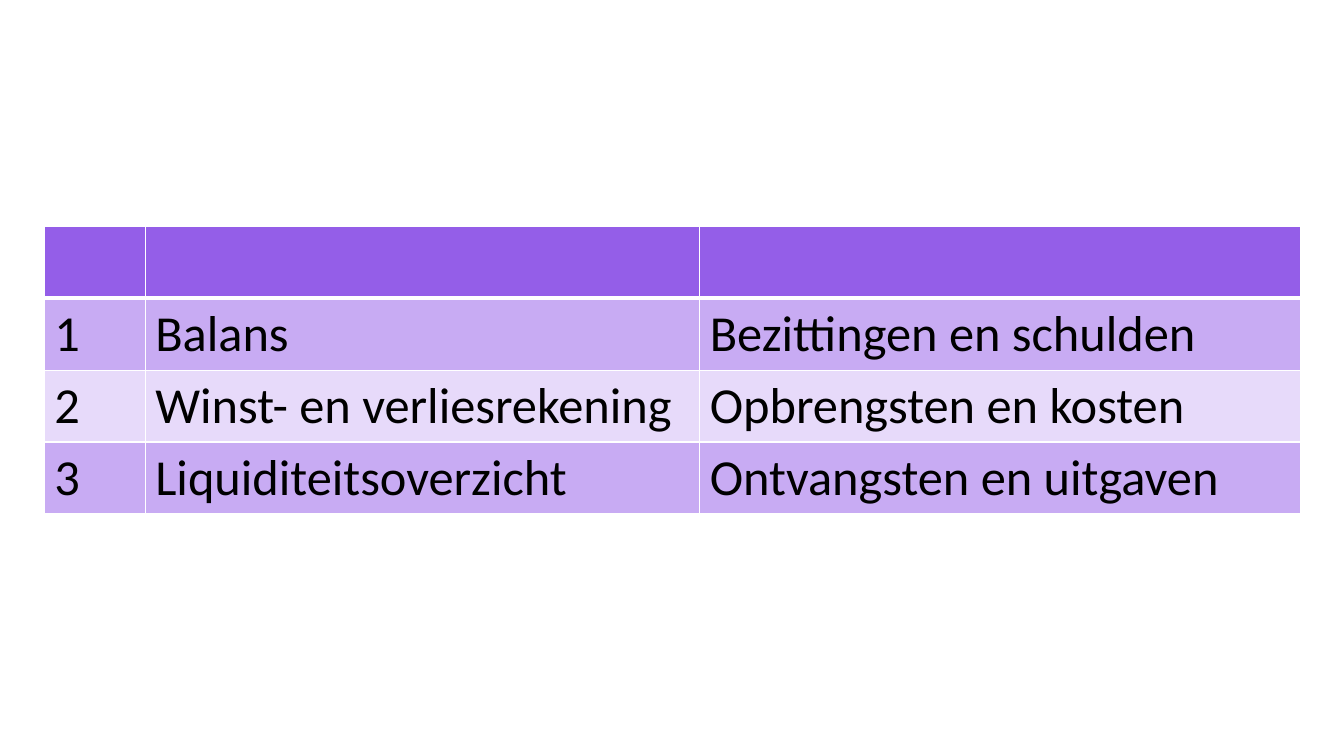
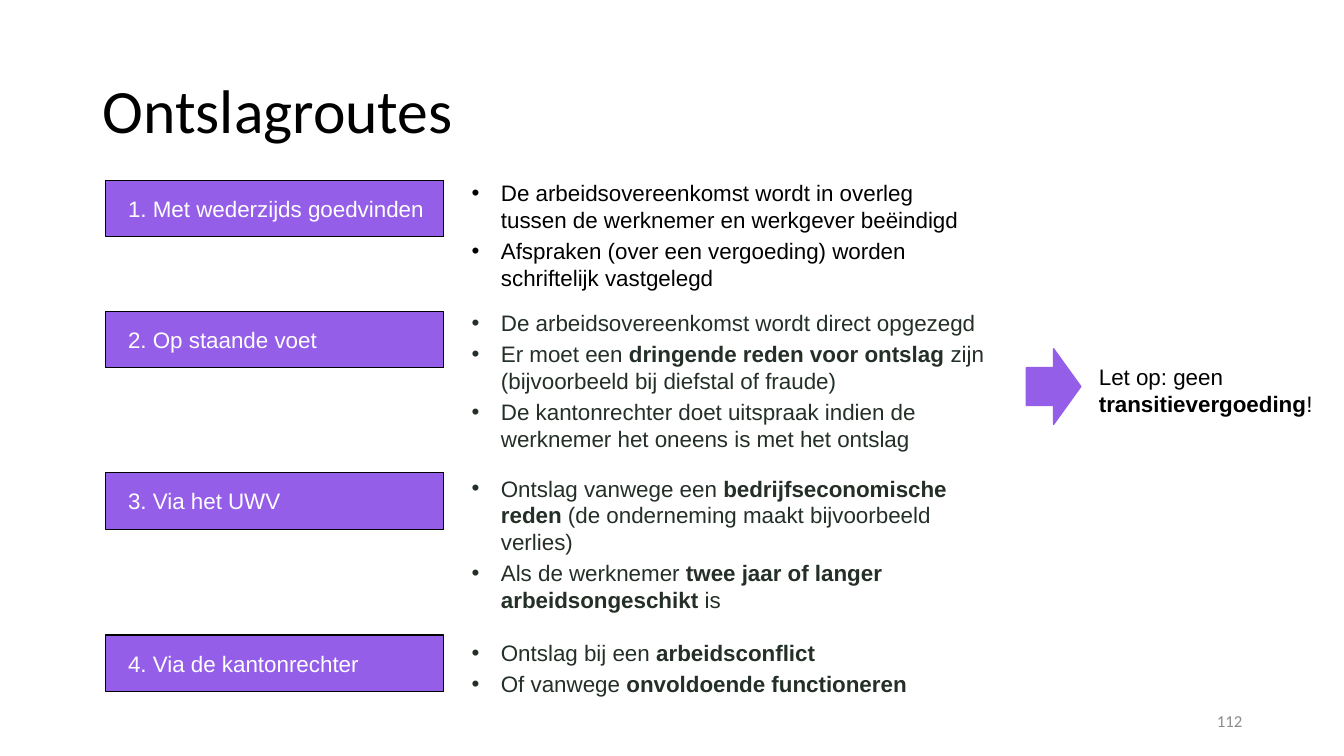
from dataclasses import dataclass

from lxml import etree
from pptx import Presentation
from pptx.dml.color import RGBColor
from pptx.enum.shapes import MSO_SHAPE
from pptx.enum.text import MSO_ANCHOR, PP_ALIGN
from pptx.oxml.ns import qn
from pptx.util import Inches, Pt

RECTANGLE = MSO_SHAPE.RECTANGLE
RIGHT_ARROW = MSO_SHAPE.RIGHT_ARROW
TOP, MIDDLE = MSO_ANCHOR.TOP, MSO_ANCHOR.MIDDLE
LEFT, RIGHT = PP_ALIGN.LEFT, PP_ALIGN.RIGHT

COLORS = {
    "purple": "945EE8",
    "band_dark": "C8ABF3",
    "band_light": "E7DAFA",
    "black": "000000",
    "white": "FFFFFF",
    "body": "242F27",
    "page": "8C8C8C",
}
HEADING_FONT, BODY_FONT = "Calibri", "Arial"
BODY_SIZE = 16
PARAGRAPH_GAP = Pt(3)
BULLET_INDENT = Inches(0.29)


@dataclass(frozen=True)
class Run:
    text: str
    bold: bool = False


@dataclass(frozen=True)
class Style:
    font: str = BODY_FONT
    size: int = BODY_SIZE
    color: str = "black"
    align: PP_ALIGN = LEFT
    line_spacing: float = 1.0
    bullet: bool = False


@dataclass(frozen=True)
class Route:
    label: str
    label_top: float
    points: list[list[Run]]
    points_top: float
    points_width: float
    points_height: float
    color: str = "body"


TITLE = Style(HEADING_FONT, 44, line_spacing=0.9)
PAGE_NUMBER = Style(HEADING_FONT, 12, "page", RIGHT)
TABLE_TEXT = Style(HEADING_FONT, 36)
LABEL = Style(color="white")

COLUMN_WIDTHS = [1, 5.5, 5.96]
ROW_HEIGHT = 0.71
STATEMENTS = [
    ("", "", ""),
    ("1", "Balans", "Bezittingen en schulden"),
    ("2", "Winst- en verliesrekening", "Opbrengsten en kosten"),
    ("3", "Liquiditeitsoverzicht", "Ontvangsten en uitgaven"),
]

ROUTES = [
    Route("1. Met wederzijds goedvinden", 1.79, [
        [Run("De arbeidsovereenkomst wordt in overleg tussen de werknemer "
             "en werkgever beëindigd")],
        [Run("Afspraken (over een vergoeding) worden schriftelijk vastgelegd")],
    ], 1.73, 5.17, 1.06, "black"),
    Route("2. Op staande voet", 3.09, [
        [Run("De arbeidsovereenkomst wordt direct opgezegd")],
        [Run("Er moet een "), Run("dringende reden voor ontslag ", True),
         Run("zijn (bijvoorbeeld bij diefstal of fraude)")],
        [Run("De kantonrechter doet uitspraak indien de werknemer het oneens "
             "is met het ontslag")],
    ], 3.02, 5.35, 1.63),
    Route("3. Via het UWV", 4.69, [
        [Run("Ontslag vanwege een "), Run("bedrijfseconomische reden ", True),
         Run("(de onderneming maakt bijvoorbeeld verlies)")],
        [Run("Als de werknemer "),
         Run("twee jaar of langer arbeidsongeschikt", True), Run(" is")],
    ], 4.66, 5.17, 1.25),
    Route("4. Via de kantonrechter", 6.3, [
        [Run("Ontslag bij een "), Run("arbeidsconflict", True)],
        [Run("Of vanwege "), Run("onvoldoende functioneren", True)],
    ], 6.29, 5.17, 0.8),
]
NOTE = [[Run("Let op: geen "), Run("transitievergoeding", True), Run("!")]]


def rgb(name: str) -> RGBColor:
    return RGBColor.from_string(COLORS[name])


def add_bullet(paragraph) -> None:
    properties = paragraph._p.get_or_add_pPr()
    properties.set("marL", str(BULLET_INDENT))
    properties.set("indent", str(-BULLET_INDENT))
    etree.SubElement(properties, qn("a:buFont"), typeface=BODY_FONT)
    etree.SubElement(properties, qn("a:buChar"), char="•")


def write(frame, paragraphs: list[list[Run]], style: Style) -> None:
    for index, runs in enumerate(paragraphs):
        paragraph = frame.add_paragraph() if index else frame.paragraphs[0]
        if style.bullet:
            add_bullet(paragraph)
        paragraph.alignment = style.align
        paragraph.line_spacing = style.line_spacing
        if index:
            paragraph.space_before = PARAGRAPH_GAP
        for item in runs:
            run = paragraph.add_run()
            run.text = item.text
            run.font.name = style.font
            run.font.size = Pt(style.size)
            run.font.bold = item.bold
            run.font.color.rgb = rgb(style.color)


def add_text(slide, left: float, top: float, width: float, height: float,
             paragraphs: list[list[Run]], style: Style,
             anchor: MSO_ANCHOR = TOP) -> None:
    box = slide.shapes.add_textbox(Inches(left), Inches(top),
                                   Inches(width), Inches(height))
    box.text_frame.word_wrap = True
    box.text_frame.vertical_anchor = anchor
    write(box.text_frame, paragraphs, style)


def add_purple_shape(slide, preset: MSO_SHAPE, left: float, top: float,
                     width: float, height: float, line: str,
                     line_width: float):
    shape = slide.shapes.add_shape(preset, Inches(left), Inches(top),
                                   Inches(width), Inches(height))
    shape.shadow.inherit = False
    shape.fill.solid()
    shape.fill.fore_color.rgb = rgb("purple")
    shape.line.color.rgb = rgb(line)
    shape.line.width = Pt(line_width)
    return shape


def set_borders(cell, top: float, bottom: float) -> None:
    properties = cell._tc.get_or_add_tcPr()
    widths = {"lnL": 1, "lnR": 1, "lnT": top, "lnB": bottom}
    for index, (side, width) in enumerate(widths.items()):
        border = etree.Element(qn(f"a:{side}"), w=str(Pt(width)))
        fill = etree.SubElement(border, qn("a:solidFill"))
        etree.SubElement(fill, qn("a:srgbClr"), val=COLORS["white"])
        properties.insert(index, border)


def build_statements(slide) -> None:
    table = slide.shapes.add_table(
        len(STATEMENTS), len(COLUMN_WIDTHS), Inches(0.44), Inches(2.25),
        Inches(sum(COLUMN_WIDTHS)), Inches(ROW_HEIGHT * len(STATEMENTS))).table
    table.horz_banding = False
    for column, width in zip(table.columns, COLUMN_WIDTHS):
        column.width = Inches(width)
    for row_index, texts in enumerate(STATEMENTS):
        table.rows[row_index].height = Inches(ROW_HEIGHT)
        band = "band_dark" if row_index % 2 else "band_light"
        for column_index, text in enumerate(texts):
            cell = table.cell(row_index, column_index)
            cell.fill.solid()
            cell.fill.fore_color.rgb = rgb(band if row_index else "purple")
            # Thick rule between the header and the first row
            set_borders(cell, top=3 if row_index == 1 else 1,
                        bottom=1 if row_index else 3)
            if text:
                write(cell.text_frame, [[Run(text)]], TABLE_TEXT)


def add_route(slide, route: Route) -> None:
    label = add_purple_shape(slide, RECTANGLE, 1.05, route.label_top,
                             3.35, 0.56, "black", 0.75)
    frame = label.text_frame
    frame.word_wrap = True
    frame.margin_left, frame.margin_right = Inches(0.22), Inches(0.05)
    frame.vertical_anchor = MIDDLE
    write(frame, [[Run(route.label)]], LABEL)
    add_text(slide, 4.58, route.points_top, route.points_width,
             route.points_height, route.points,
             Style(color=route.color, bullet=True))


def build_dismissal_routes(slide) -> None:
    add_text(slide, 0.92, 0.4, 11.5, 1.45, [[Run("Ontslagroutes")]], TITLE,
             MIDDLE)
    for route in ROUTES:
        add_route(slide, route)
    # Remark beside the second route
    add_purple_shape(slide, RIGHT_ARROW, 10.18, 3.46, 0.54, 0.75, "purple", 1)
    add_text(slide, 10.8, 3.55, 2.45, 1.06, NOTE, Style())
    add_text(slide, 9.42, 6.95, 3, 0.4, [[Run("112")]], PAGE_NUMBER, MIDDLE)


def main() -> None:
    deck = Presentation()
    deck.slide_width, deck.slide_height = Inches(13.33), Inches(7.5)
    blank = deck.slide_layouts[6]
    for build in (build_statements, build_dismissal_routes):
        build(deck.slides.add_slide(blank))
    deck.save("out.pptx")


if __name__ == "__main__":
    main()
